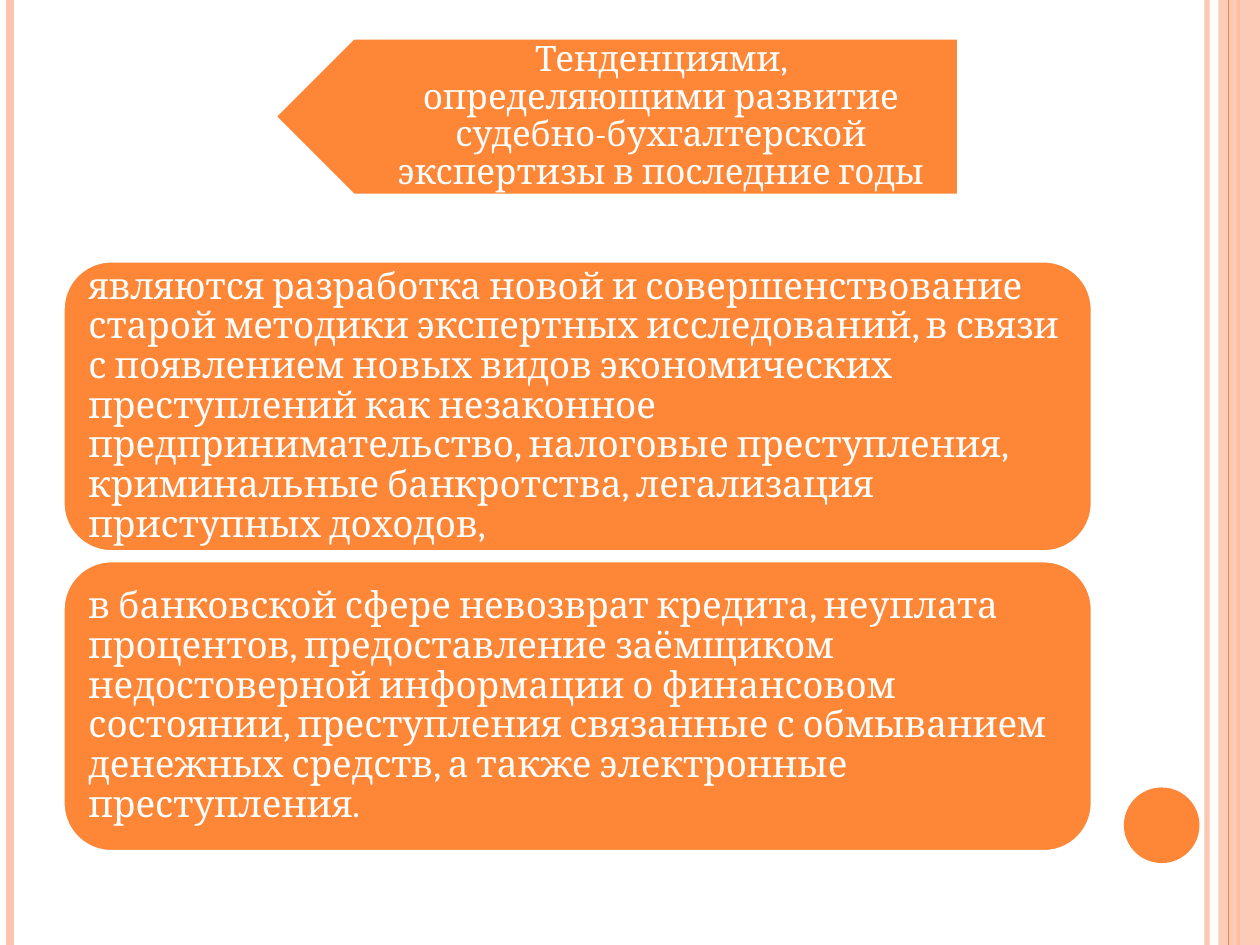
"""Builds a slide on the trends in forensic accounting expertise."""
from lxml.etree import SubElement
from pptx import Presentation
from pptx.dml.color import RGBColor as Rgb
from pptx.enum.shapes import MSO_CONNECTOR as Link, MSO_SHAPE as Kind
from pptx.enum.text import MSO_ANCHOR as Anchor, PP_ALIGN as Align
from pptx.oxml.ns import qn
from pptx.util import Inches, Pt

theme = {
    "main": Rgb.from_string("FE8637"),
    "pale": Rgb.from_string("FEC3AE"),
    "white": Rgb.from_string("FFFFFF"),
    "font": "Cambria",
    "head": Pt(20),
    "body": Pt(21),
}

deck = Presentation()
deck.slide_width, deck.slide_height = Inches(10), Inches(7.5)
shapes = deck.slides.add_slide(deck.slide_layouts[6]).shapes
cols, rows = 100, 75
col, row = deck.slide_width // cols, deck.slide_height // rows


def add_rule(x, tint, width):
    rule = shapes.add_connector(Link.STRAIGHT, int(x * col), 0, int(x * col), rows * row)
    rule.line.color.rgb = theme[tint]
    rule.line.width = Pt(width)
    SubElement(rule.element.spPr, qn("a:effectLst"))
    return rule


def add_block(kind, x, y, w, h, tint, edge=None):
    block = shapes.add_shape(kind, int(x * col), int(y * row), int(w * col), int(h * row))
    block.shadow.inherit = False
    block.fill.solid()
    block.fill.fore_color.rgb = theme[tint]
    if edge:
        block.line.color.rgb = theme[edge]
        block.line.width = Pt(2)
    else:
        block.line.fill.background()
    return block


inner = add_rule(95.8, "pale", 3)
add_rule(0.8, "pale", 4.5)
add_rule(98.3, "main", 1.5)
band_x = 96.7
band = add_block(Kind.RECTANGLE, band_x, 0, cols - band_x, rows, "pale")
add_rule(97.5, "main", 0.75)
add_block(Kind.OVAL, 89.2, 62.5, 6, 6, "main")

for item, share in ((inner, 93), (band, 87)):
    paint = next(item.element.spPr.iter(qn("a:srgbClr")))
    SubElement(paint, qn("a:alpha"), val=str(share * 1000))

top, high, right = 3, 12.5, 76.1
arrow_x, title_x = 21.8, 24.9
arrow = add_block(Kind.PENTAGON, arrow_x, top, right - arrow_x, high, "main", "white")
arrow.rotation = 180
title = shapes.add_textbox(
    int(title_x * col), int(top * row), int((right - title_x) * col), int(high * row))
head = "Тенденциями, определяющими развитие судебно-бухгалтерской экспертизы в последние годы"
texts = [(title, head, "head", Align.CENTER, (0.55, 0.08, 0.16, 0.08))]

trends = [
    "являются разработка новой и совершенствование старой методики экспертных исследований, "
    "в связи с появлением новых видов экономических преступлений как незаконное "
    "предпринимательство, налоговые преступления, криминальные банкротства, "
    "легализация приступных доходов,",
    "в банковской сфере невозврат кредита, неуплата процентов, предоставление заёмщиком "
    "недостоверной информации о финансовом состоянии, преступления связанные с обмыванием "
    "денежных средств, а также электронные преступления.",
]
first, tall, gap = 20.7, 23.1, 0.7
for i, trend in enumerate(trends):
    y = first + i * (tall + gap)
    card = add_block(Kind.ROUNDED_RECTANGLE, 5, y, 81.7, tall, "main", "white")
    texts.append((card, trend, "body", Align.LEFT, (0.09, 0.09, 0.09, 0.09)))

for block, words, size, align, pads in texts:
    frame = block.text_frame
    frame.word_wrap = True
    frame.vertical_anchor = Anchor.MIDDLE
    frame.margin_left, frame.margin_top, frame.margin_right, frame.margin_bottom = map(Inches, pads)
    frame.text = words
    par = frame.paragraphs[0]
    par.alignment, par.line_spacing = align, 0.9
    font = par.runs[0].font
    font.name, font.size = theme["font"], theme[size]
    font.color.rgb = theme["white"]

deck.save("out.pptx")
